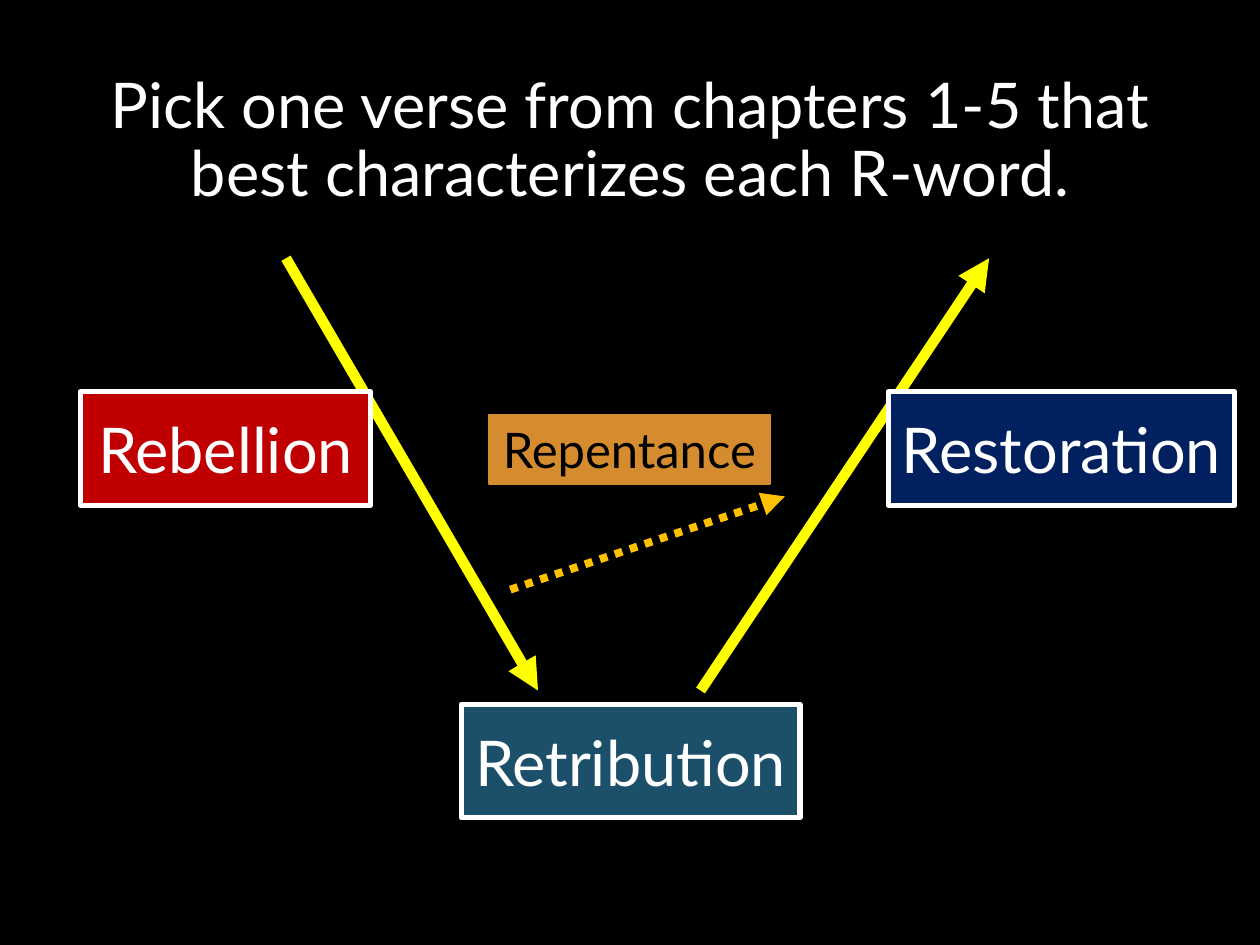
from lxml import etree
from pptx import Presentation
from pptx.dml.color import RGBColor
from pptx.enum.dml import MSO_LINE
from pptx.enum.shapes import MSO_CONNECTOR, MSO_SHAPE
from pptx.enum.text import MSO_ANCHOR, PP_ALIGN
from pptx.oxml.ns import qn
from pptx.util import Inches, Pt

RECTANGLE = MSO_SHAPE.RECTANGLE
STRAIGHT = MSO_CONNECTOR.STRAIGHT
DOTTED = MSO_LINE.ROUND_DOT
MIDDLE = MSO_ANCHOR.MIDDLE
CENTER = PP_ALIGN.CENTER

THEME = {
    "font": "Lato", "large": 36, "small": 28,
    "black": "000000", "white": "FFFFFF", "yellow": "FFFF00", "amber": "FFC000",
    "red": "C00000", "teal": "1C4F69", "navy": "002060", "orange": "D58C2E",
}

# Content: positions in inches
TITLE = "Pick one verse from chapters 1-5 that best characterizes each R-word."
TITLE_BOX = (0.69, 0.4, 8.62, 1.45)

# start, end, color, width, dash
ARROWS = [
    ((2.27, 2.05), (4.27, 5.48), "yellow", 6, None),
    ((5.56, 5.48), (7.85, 2.05), "yellow", 6, None),
    ((4.05, 4.68), (6.23, 3.94), "amber", 4.5, DOTTED),
]

# word, box, fill, outline, outline width, text color, text size
WORDS = [
    ("Rebellion", (0.64, 3.11, 2.3, 0.9), "red", "white", 3, "white", "large"),
    ("Retribution", (3.66, 5.59, 2.69, 0.9), "teal", "white", 3, "white", "large"),
    ("Restoration", (7.05, 3.11, 2.75, 0.9), "navy", "white", 3, "white", "large"),
    ("Repentance", (3.88, 3.29, 2.23, 0.55), "orange", "orange", 1, "black", "small"),
]


def color(name):
    return RGBColor.from_string(THEME[name])


def lengths(values):
    return [Inches(value) for value in values]


def write(shape, text, text_color, size, wrap):
    text_frame = shape.text_frame
    text_frame.text = text
    text_frame.word_wrap = wrap
    text_frame.vertical_anchor = MIDDLE
    paragraph = text_frame.paragraphs[0]
    paragraph.alignment = CENTER
    font = paragraph.runs[0].font
    font.name = THEME["font"]
    font.size = Pt(THEME[size])
    font.color.rgb = color(text_color)
    return paragraph


def add_arrow(slide, start, end, line_color, width, dash):
    arrow = slide.shapes.add_connector(STRAIGHT, *lengths(start + end))
    arrow.line.color.rgb = color(line_color)
    arrow.line.width = Pt(width)
    if dash:
        arrow.line.dash_style = dash
    properties = arrow.element.spPr
    etree.SubElement(properties.find(qn("a:ln")), qn("a:tailEnd"), type="triangle")
    etree.SubElement(properties, qn("a:effectLst"))


def add_word(slide, word, box, fill, outline, width, text_color, size):
    shape = slide.shapes.add_shape(RECTANGLE, *lengths(box))
    shape.shadow.inherit = False
    shape.fill.solid()
    shape.fill.fore_color.rgb = color(fill)
    shape.line.color.rgb = color(outline)
    shape.line.width = Pt(width)
    write(shape, word, text_color, size, wrap=False)


def main():
    presentation = Presentation()
    presentation.slide_width, presentation.slide_height = lengths((10, 7.5))
    slide = presentation.slides.add_slide(presentation.slide_layouts[6])
    slide.background.fill.solid()
    slide.background.fill.fore_color.rgb = color("black")

    # Title
    title = slide.shapes.add_textbox(*lengths(TITLE_BOX))
    write(title, TITLE, "white", "large", wrap=True).line_spacing = 0.9

    # Arrows lie behind the word boxes
    for arrow in ARROWS:
        add_arrow(slide, *arrow)
    for word in WORDS:
        add_word(slide, *word)

    presentation.save("out.pptx")


if __name__ == "__main__":
    main()
